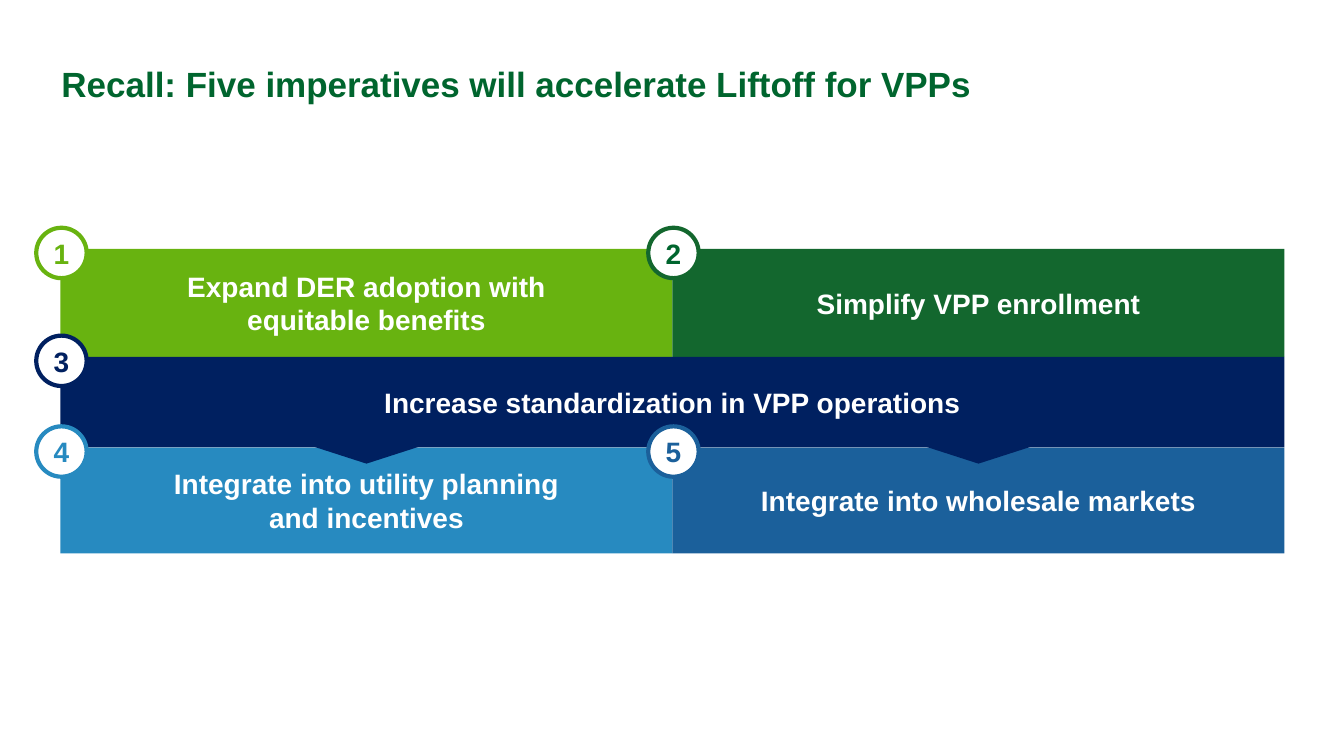
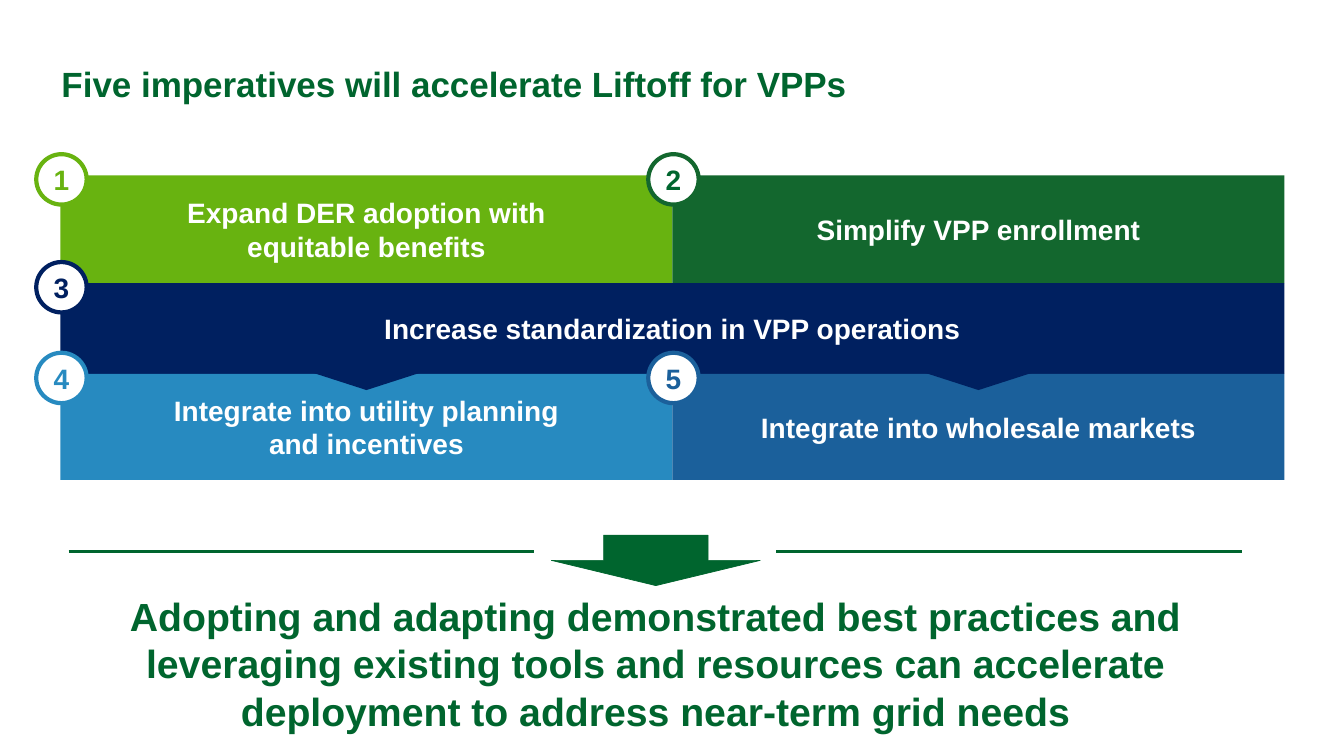
from dataclasses import dataclass
from itertools import accumulate

from lxml import etree
from pptx import Presentation
from pptx.dml.color import RGBColor
from pptx.enum.shapes import MSO_CONNECTOR, MSO_SHAPE
from pptx.enum.text import MSO_ANCHOR, PP_ALIGN
from pptx.oxml.ns import qn
from pptx.util import Inches, Pt

RECT, OVAL, DOWN = MSO_SHAPE.RECTANGLE, MSO_SHAPE.OVAL, MSO_SHAPE.DOWN_ARROW
LINE = MSO_CONNECTOR.STRAIGHT
LEFT, CENTER = PP_ALIGN.LEFT, PP_ALIGN.CENTER
TOP, MIDDLE, BOTTOM = MSO_ANCHOR.TOP, MSO_ANCHOR.MIDDLE, MSO_ANCHOR.BOTTOM


# Colours, type and sizes shared by the slides
@dataclass(frozen=True)
class Theme:
    font: str = "Arial"
    brand: str = "00652E"
    white: str = "FFFFFF"
    lime: str = "68B310"
    green: str = "13672E"
    navy: str = "002060"
    sky: str = "278AC0"
    blue: str = "1B609B"
    title: int = 25
    label: int = 20
    closing: int = 28
    ring: int = 3
    rule: float = 2.25


T = Theme()
WIDE, HIGH = 13.33, 7.5

# Grid: two columns, three rows of their own heights
EDGE, COL = 0.6, 6.07
ROWS = (1.07, 0.9, 1.05)
BADGE, TIP_W, TIP_H = 0.5, 1.24, 0.4

# Row, column, columns spanned, fill, number colour, label lines
CELLS = (
    (0, 0, 1, T.lime, T.lime, ("Expand DER adoption with", "equitable benefits")),
    (0, 1, 1, T.green, T.brand, ("Simplify VPP enrollment",)),
    (1, 0, 2, T.navy, T.navy, ("Increase standardization in VPP operations",)),
    (2, 0, 1, T.sky, T.sky, ("Integrate into utility planning", "and incentives")),
    (2, 1, 1, T.blue, T.blue, ("Integrate into wholesale markets",)),
)


def rgb(code):
    return RGBColor.from_string(code)


def write(shape, lines, size, color, align=CENTER, anchor=MIDDLE):
    frame = shape.text_frame
    frame.word_wrap = True
    frame.vertical_anchor = anchor
    frame.margin_left = frame.margin_right = 0
    frame.margin_top = frame.margin_bottom = 0
    para = frame.paragraphs[0]
    para.alignment = align
    for i, line in enumerate(lines):
        if i:
            para.add_line_break()
        run = para.add_run()
        run.text = line
        font = run.font
        font.name, font.size, font.bold = T.font, Pt(size), True
        font.color.rgb = rgb(color)


def block(slide, kind, box, fill, line=None, weight=0.5):
    shape = slide.shapes.add_shape(kind, *map(Inches, box))
    shape.shadow.inherit = False
    shape.fill.solid()
    shape.fill.fore_color.rgb = rgb(fill)
    if line:
        shape.line.color.rgb = rgb(line)
        shape.line.width = Pt(weight)
    else:
        shape.line.fill.background()
    return shape


def words(slide, box, *style):
    write(slide.shapes.add_textbox(*map(Inches, box)), *style)


def rule(slide, x, y, width):
    line = slide.shapes.add_connector(LINE, *map(Inches, (x, y, x + width, y)))
    line.line.color.rgb = rgb(T.brand)
    line.line.width = Pt(T.rule)
    props = line._element.find(qn("p:spPr"))
    etree.SubElement(props, qn("a:effectLst"))


def panel(slide, top):
    tops = list(accumulate(ROWS, initial=top))
    # Coloured cells
    for row, col, span, fill, _, lines in CELLS:
        box = (EDGE + col * COL, tops[row], span * COL, ROWS[row])
        write(block(slide, RECT, box, fill), lines, T.label, T.white)
    # Pointers from the middle band into the lower cells
    for col in range(2):
        x = EDGE + (col + 0.5) * COL - TIP_W / 2
        block(slide, DOWN, (x, tops[2] - 0.24, TIP_W, TIP_H), T.navy)
    # Number badges on the cell corners
    for num, (row, col, _, ring, ink, _) in enumerate(CELLS, 1):
        box = (EDGE + col * COL - 0.24, tops[row] - 0.21, BADGE, BADGE)
        disc = block(slide, OVAL, box, T.white, ring, T.ring)
        write(disc, (str(num),), T.label, ink)


def closing(slide):
    # Arrow between two rules, then the conclusion
    left, width, part = 0.68, 11.64, 4.62
    block(slide, DOWN, (5.47, 5.31, 2.07, 0.5), T.brand, T.brand)
    for x in (left, left + width - part):
        rule(slide, x, 5.47, part)
    text = ("Adopting and adapting demonstrated best practices and "
            "leveraging existing tools and resources can accelerate "
            "deployment to address near-term grid needs")
    words(slide, (left, 5.88, width, 1.41), (text,),
          T.closing, T.brand, CENTER, TOP)


def page(deck, title, top):
    slide = deck.slides.add_slide(deck.slide_layouts[6])
    words(slide, (0.61, 0.24, 12.12, 0.8), (title,),
          T.title, T.brand, LEFT, BOTTOM)
    panel(slide, top)
    return slide


def main():
    deck = Presentation()
    deck.slide_width, deck.slide_height = Inches(WIDE), Inches(HIGH)
    page(deck, "Recall: Five imperatives will accelerate Liftoff for VPPs", 2.47)
    closing(page(deck, "Five imperatives will accelerate Liftoff for VPPs", 1.74))
    deck.save("out.pptx")


if __name__ == "__main__":
    main()
